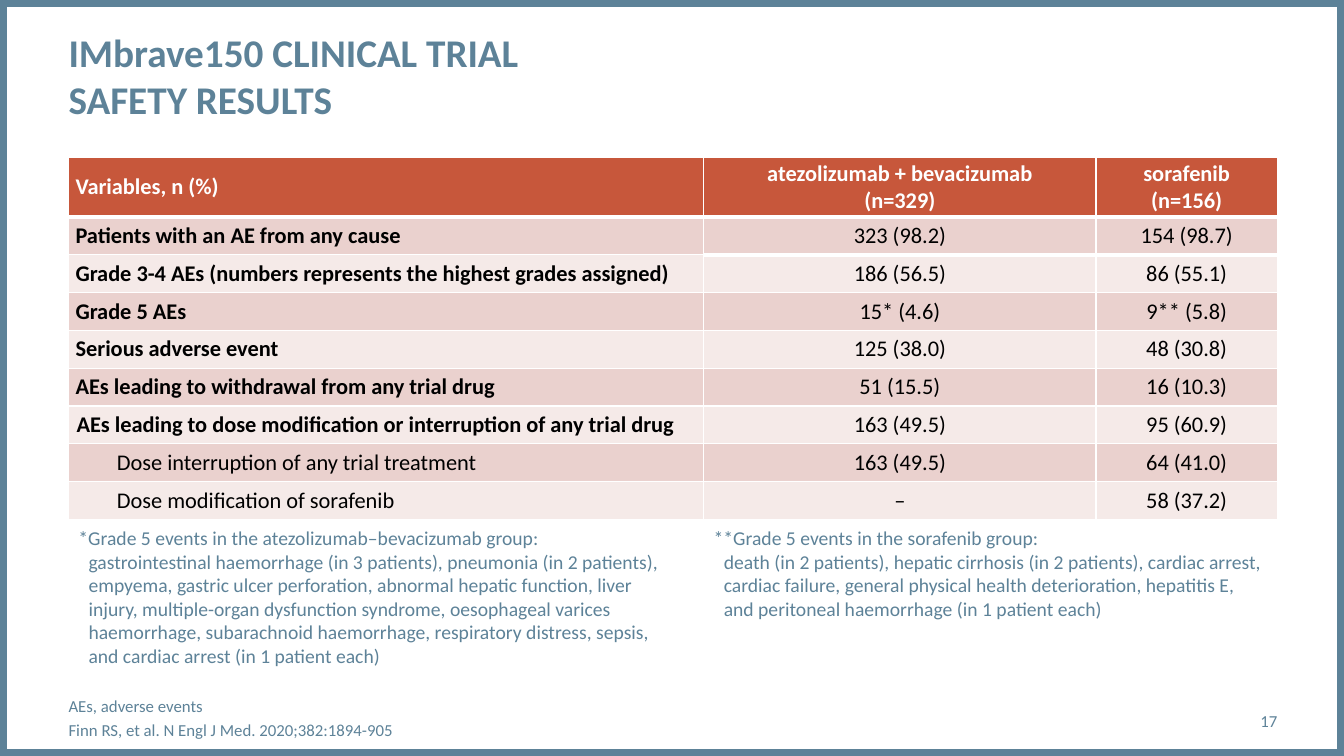
from lxml.etree import SubElement
from pptx import Presentation
from pptx.dml.color import RGBColor
from pptx.enum.shapes import MSO_SHAPE
from pptx.enum.text import MSO_ANCHOR, PP_ALIGN
from pptx.oxml.ns import qn
from pptx.util import Inches, Pt

SLATE = RGBColor(0x5D, 0x82, 0x98)
RUST = RGBColor(0xC7, 0x57, 0x3B)
ROSE = RGBColor(0xEA, 0xD1, 0xCE)
BLUSH = RGBColor(0xF5, 0xEA, 0xE8)
WHITE = RGBColor(0xFF, 0xFF, 0xFF)
BLACK = RGBColor(0x00, 0x00, 0x00)
FONT = "Calibri"
LEFT = 0.68

HEADERS = [
    ["Variables, n (%)"],
    ["atezolizumab + bevacizumab", "(n=329)"],
    ["sorafenib", "(n=156)"],
]
EVENTS = [
    ("Patients with an AE from any cause", "323 (98.2)", "154 (98.7)", 0, True),
    ("Grade 3-4 AEs (numbers represents the highest grades assigned)",
     "186 (56.5)", "86 (55.1)", 0, True),
    ("Grade 5 AEs", "15* (4.6)", "9** (5.8)", 0, True),
    ("Serious adverse event", "125 (38.0)", "48 (30.8)", 0, True),
    ("AEs leading to withdrawal from any trial drug", "51 (15.5)", "16 (10.3)", 0, True),
    ("AEs leading to dose modification or interruption of any trial drug",
     "163 (49.5)", "95 (60.9)", 0.01, True),
    ("Dose interruption of any trial treatment", "163 (49.5)", "64 (41.0)", 0.41, False),
    ("Dose modification of sorafenib", "–", "58 (37.2)", 0.41, False),
]
COLUMN_WIDTHS = [6.3, 3.89, 1.8]
HEADER_HEIGHT = 0.59
EVENT_HEIGHT = 3 / len(EVENTS)


def add_span(para, text, size, color, bold=False):
    span = para.add_run()
    span.text = text
    span.font.name = FONT
    span.font.size = Pt(size)
    span.font.bold = bold
    span.font.color.rgb = color


def indent(para, inches):
    para._p.get_or_add_pPr().set("marL", str(Inches(inches)))


def paragraphs(frame, count):
    return [frame.paragraphs[0]] + [frame.add_paragraph() for _ in range(count - 1)]


def clear_insets(frame):
    frame.margin_left = frame.margin_right = 0
    frame.margin_top = frame.margin_bottom = 0


def add_frame(page, deck):
    frame = page.shapes.add_shape(MSO_SHAPE.RECTANGLE, 0, 0, deck.slide_width, deck.slide_height)
    frame.shadow.inherit = False
    frame.fill.background()
    frame.line.color.rgb = SLATE
    frame.line.width = Pt(10)


def fill_title(page, lines):
    title = page.shapes.title
    title.left, title.top = Inches(LEFT), Inches(0.28)
    title.width, title.height = Inches(9.56), Inches(0.94)
    frame = title.text_frame
    clear_insets(frame)
    frame.word_wrap = True
    frame.vertical_anchor = MSO_ANCHOR.TOP
    para = frame.paragraphs[0]
    para.alignment = PP_ALIGN.LEFT
    for number, line in enumerate(lines):
        if number:
            para.add_line_break()
        add_span(para, line, 28, SLATE, True)


def add_text_box(page, left, top, width, height):
    box = page.shapes.add_textbox(Inches(left), Inches(top), Inches(width), Inches(height))
    box.text_frame.word_wrap = True
    return box.text_frame


def add_footer(page, left, top, width, lines, alignment, space_after):
    frame = add_text_box(page, left, top, width, 0.4)
    clear_insets(frame)
    frame.vertical_anchor = MSO_ANCHOR.MIDDLE
    for para, line in zip(paragraphs(frame, len(lines)), lines):
        para.alignment = alignment
        para.space_after = Pt(space_after)
        add_span(para, line, 12, SLATE)


def add_footnote(page, left, width, height, heading, details):
    frame = add_text_box(page, left, 5.17, width, height)
    first, second = paragraphs(frame, 2)
    add_span(first, heading, 14, SLATE)
    indent(second, 0.1)
    add_span(second, details, 14, SLATE)


def set_borders(cell, top, bottom):
    properties = cell._tc.get_or_add_tcPr()
    for place, (tag, points) in enumerate(
            [("a:lnL", 1), ("a:lnR", 1), ("a:lnT", top), ("a:lnB", bottom)]):
        line = SubElement(properties, qn(tag), w=str(Pt(points)))
        fill = SubElement(line, qn("a:solidFill"))
        SubElement(fill, qn("a:srgbClr"), val=str(WHITE))
        properties.insert(place, line)


def fill_cell(cell, lines, fill, color, bold, centred, margin, left_indent=0):
    cell.fill.solid()
    cell.fill.fore_color.rgb = fill
    cell.vertical_anchor = MSO_ANCHOR.MIDDLE
    cell.margin_left = cell.margin_right = Inches(0.07)
    cell.margin_top = cell.margin_bottom = Inches(margin)
    for para, line in zip(paragraphs(cell.text_frame, len(lines)), lines):
        para.alignment = PP_ALIGN.CENTER if centred else PP_ALIGN.LEFT
        if left_indent:
            indent(para, left_indent)
        add_span(para, line, 16, color, bold)


def add_safety_table(page):
    height = HEADER_HEIGHT + EVENT_HEIGHT * len(EVENTS)
    table = page.shapes.add_table(
        len(EVENTS) + 1, len(COLUMN_WIDTHS), Inches(LEFT), Inches(1.56),
        Inches(sum(COLUMN_WIDTHS)), Inches(height)).table
    for column, width in zip(table.columns, COLUMN_WIDTHS):
        column.width = Inches(width)
    for number, row in enumerate(table.rows):
        row.height = Inches(EVENT_HEIGHT if number else HEADER_HEIGHT)
    for column, lines in enumerate(HEADERS):
        cell = table.cell(0, column)
        fill_cell(cell, lines, RUST, WHITE, True, column > 0, 0.03)
        set_borders(cell, 1, 3)
    for number, (*texts, left_indent, bold) in enumerate(EVENTS, 1):
        fill = ROSE if number % 2 else BLUSH
        for column, text in enumerate(texts):
            cell = table.cell(number, column)
            label = column == 0
            fill_cell(cell, [text], fill, BLACK, bold and label, not label, 0.05,
                      left_indent if label else 0)
            top = 3 if number == 1 or (number == 2 and not label) else 1
            bottom = 3 if number == 1 and not label else 1
            set_borders(cell, top, bottom)


def main():
    deck = Presentation()
    deck.slide_width, deck.slide_height = Inches(13.33), Inches(7.5)
    page = deck.slides.add_slide(deck.slide_layouts.get_by_name("Title Only"))
    add_frame(page, deck)
    fill_title(page, ["IMbrave150 CLINICAL TRIAL", "SAFETY RESULTS"])
    add_footer(page, 11.5, 6.95, 1.17, ["17"], PP_ALIGN.RIGHT, 0)
    add_footer(page, LEFT, 6.92, 8.88,
               ["AEs, adverse events", "Finn RS, et al. N Engl J Med. 2020;382:1894-905"],
               PP_ALIGN.LEFT, 3)
    add_safety_table(page)
    add_footnote(
        page, LEFT, 5.99, 1.51, "*Grade 5 events in the atezolizumab–bevacizumab group:",
        "gastrointestinal haemorrhage (in 3 patients), pneumonia (in 2 patients), empyema, "
        "gastric ulcer perforation, abnormal hepatic function, liver injury, multiple-organ "
        "dysfunction syndrome, oesophageal varices haemorrhage, subarachnoid haemorrhage, "
        "respiratory distress, sepsis, and cardiac arrest (in 1 patient each)")
    add_footnote(
        page, 6.98, 5.69, 1.04, "**Grade 5 events in the sorafenib group:",
        "death (in 2 patients), hepatic cirrhosis (in 2 patients), cardiac arrest, cardiac "
        "failure, general physical health deterioration, hepatitis E, and peritoneal "
        "haemorrhage (in 1 patient each)")
    deck.save("out.pptx")


if __name__ == "__main__":
    main()
